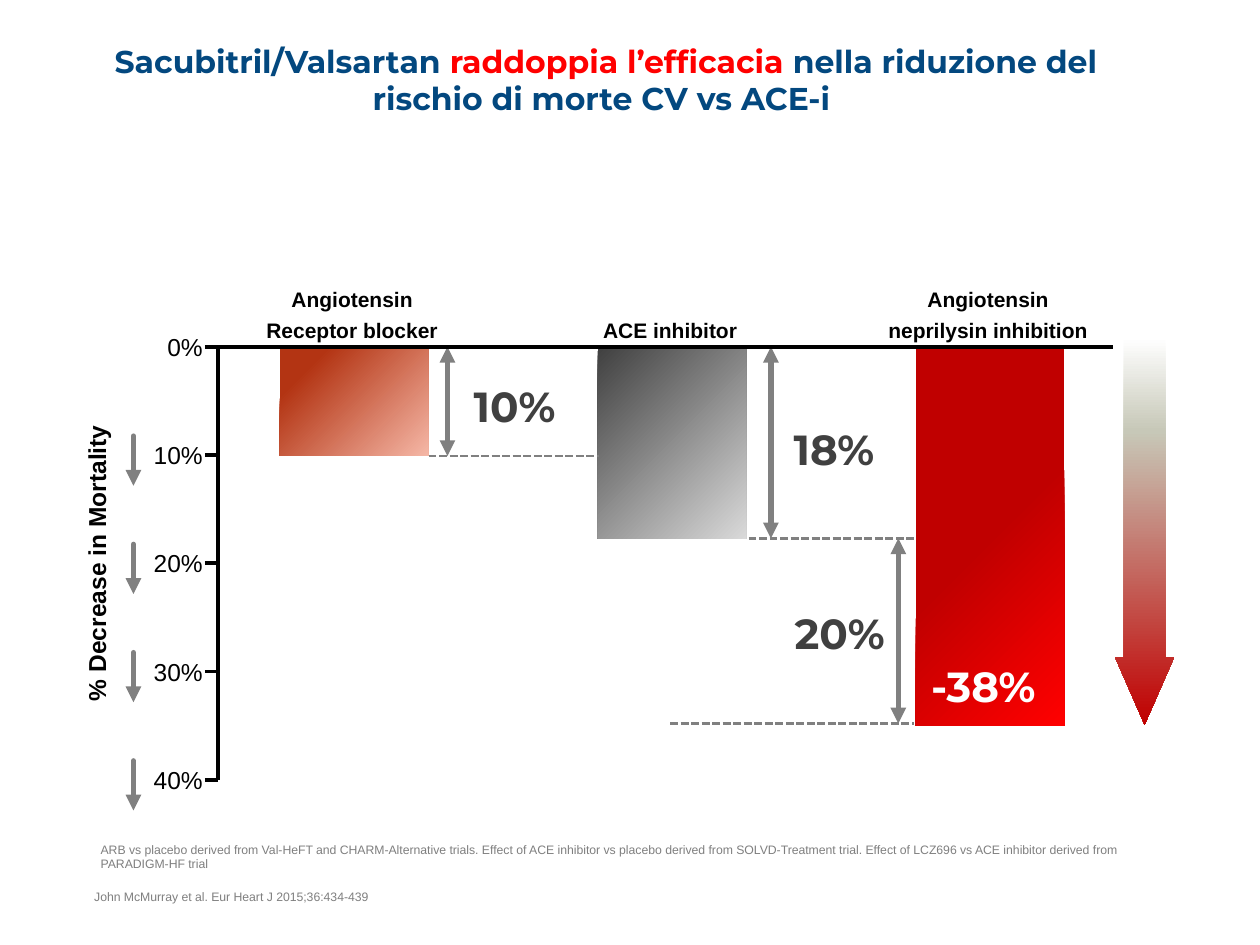
from copy import deepcopy

from lxml import etree
from pptx import Presentation
from pptx.dml.color import RGBColor
from pptx.enum.dml import MSO_LINE
from pptx.enum.shapes import MSO_CONNECTOR, MSO_SHAPE
from pptx.enum.text import PP_ALIGN
from pptx.oxml.ns import qn
from pptx.util import Cm, Pt

LEFT, CENTER, RIGHT = PP_ALIGN.LEFT, PP_ALIGN.CENTER, PP_ALIGN.RIGHT
STRAIGHT, DASHED = MSO_CONNECTOR.STRAIGHT, MSO_LINE.SQUARE_DOT
RECTANGLE, DOWN_ARROW = MSO_SHAPE.RECTANGLE, MSO_SHAPE.DOWN_ARROW
BODY, DISPLAY = "Arial", "Montserrat"
COLORS = {
    "black": "000000", "white": "FFFFFF", "navy": "03487F", "red": "FF0000",
    "crimson": "C00000", "charcoal": "404040", "silver": "D9D9D9",
    "gray": "808080", "note": "7F7F7F", "rust": "B33413",
    "salmon": "F5B7A6", "sage": "C7C8B8",
}
PERCENT_MAX, PERCENT_STEP = 40, 10
BARS = [
    ("Angiotensin\nReceptor blocker", 5.28, 1.27, 10.1, [(0.19, "rust"), (1, "salmon")]),
    ("ACE inhibitor", 3.89, 0.64, 17.7, [(0, "charcoal"), (1, "silver")]),
    ("Angiotensin\vneprilysin inhibition", 6.07, 1.27, 35, [(0.5, "crimson"), (1, "red")]),
]
GUIDES = [(4.25, 7.68, 10.1), (10.7, 14.03, 17.7), (9.12, 14.03, 34.8)]
SPANS = [(4.63, 0, 10.1), (11.15, 0, 17.7), (13.72, 17.7, 34.8)]
EFFECTS = [
    ("10%", 4.91, 0.55, 2.51, "charcoal"),
    ("18%", 11.36, 1.42, 2.51, "charcoal"),
    ("20%", 11.38, 5.13, 2.51, "charcoal"),
    ("-38%", 14.13, 6.2, 2.9, "white"),
]
TITLE = [
    ("Sacubitril/Valsartan ", "navy"),
    ("raddoppia l’efficacia ", "red"),
    ("nella riduzione del rischio di morte CV vs ACE-i ", "navy"),
]
TRIALS = (
    "ARB vs placebo derived from Val-HeFT and CHARM-Alternative trials. "
    "Effect of ACE inhibitor vs placebo derived from SOLVD-Treatment trial. "
    "Effect of LCZ696 vs ACE inhibitor derived from PARADIGM-HF trial"
)
CITATION = "John McMurray et al. Eur Heart J 2015;36:434-439"


def rgb(name):
    """Return the named colour."""
    return RGBColor.from_string(COLORS[name])


def add_text(slide, box, text, size, color="black", font=BODY, bold=False,
             align=LEFT, wrap=True, inset=(0, 0), spacing=None):
    """Add a text box with uniform formatting and return it."""
    label = slide.shapes.add_textbox(*map(Cm, box))
    frame = label.text_frame
    frame.word_wrap = wrap
    frame.margin_left = frame.margin_right = Cm(inset[0])
    frame.margin_top = frame.margin_bottom = Cm(inset[1])
    frame.text = text
    for paragraph in frame.paragraphs:
        paragraph.alignment = align
        paragraph.line_spacing = spacing
        paragraph.font.size = Pt(size)
        paragraph.font.name = font
        paragraph.font.bold = bold
        paragraph.font.color.rgb = rgb(color)
    return label


def add_line(slide, start, end, color, width, dash=None, ends=(), cap="flat"):
    """Add a straight line, with triangles at the ends that are named."""
    line = slide.shapes.add_connector(STRAIGHT, *map(Cm, (*start, *end)))
    line.line.color.rgb = rgb(color)
    line.line.width = Pt(width)
    if dash:
        line.line.dash_style = dash
    outline = line.line._get_or_add_ln()
    outline.set("cap", cap)
    for end_name in ends:
        etree.SubElement(outline, qn(f"a:{end_name}")).set("type", "triangle")
    etree.SubElement(line._element.spPr, qn("a:effectLst"))


def add_gradient_shape(slide, kind, box, stops, angle):
    """Add a borderless shape with a linear gradient, angle clockwise."""
    shape = slide.shapes.add_shape(kind, *map(Cm, box))
    shape.shadow.inherit = False
    shape.line.fill.background()
    shape.fill.gradient()
    stop_list = shape._element.spPr.find(f".//{qn('a:gsLst')}")
    while len(stop_list) < len(stops):
        stop_list.append(deepcopy(stop_list[-1]))
    for stop, (position, color) in zip(shape.fill.gradient_stops, stops):
        stop.position = position
        stop.color.rgb = rgb(color)
    shape.fill.gradient_angle = 360 - angle
    return shape


def add_title(slide, box):
    """Write the headline with its highlighted phrase."""
    title = add_text(slide, box, "", 18, font=DISPLAY, bold=True, align=CENTER)
    paragraph = title.text_frame.paragraphs[0]
    for phrase, color in TITLE:
        run = paragraph.add_run()
        run.text = phrase
        run.font.color.rgb = rgb(color)


def add_axis_title(slide, box):
    """Write the rotated axis title with a downward arrow for each step."""
    left, top, width, height = box
    thickness = 0.89
    title_box = (left - height / 2, top + (height - thickness) / 2, height, thickness)
    title = add_text(slide, title_box, "% Decrease in Mortality", 14, bold=True,
                     align=CENTER, inset=(0.25, 0.13), spacing=Pt(18))
    title.rotation = 270
    steps = PERCENT_MAX // PERCENT_STEP
    for step in range(steps):
        y = top + 1.8 + step * height / steps
        add_line(slide, (left + width, y), (left + width, y + 1), "gray", 3,
                 ends=["tailEnd"], cap="rnd")


def add_plot(slide, box):
    """Draw the hanging bars, their reductions and both axes."""
    left, top, width, height = box

    def y_of(percent):
        """Return the height at which a percentage lies."""
        return top + height * percent / PERCENT_MAX

    for index, (name, name_width, name_height, depth, stops) in enumerate(BARS):
        bar_left, bar_width = left + 1.25 + 6.41 * index, 3
        add_gradient_shape(slide, RECTANGLE,
                           (bar_left, top, bar_width, y_of(depth) - top), stops, 45)
        name_box = (bar_left + (bar_width - name_width) / 2 - 0.04,
                    top - 0.08 - name_height, name_width, name_height)
        add_text(slide, name_box, name, 12, bold=True, align=CENTER, spacing=Pt(18))
    for start, end, percent in GUIDES:
        add_line(slide, (left + start, y_of(percent)), (left + end, y_of(percent)),
                 "gray", 1.5, dash=DASHED)
    for x, start, end in SPANS:
        add_line(slide, (left + x, y_of(start)), (left + x, y_of(end)),
                 "gray", 3, ends=["headEnd", "tailEnd"])
    for effect, x, y, effect_width, color in EFFECTS:
        add_text(slide, (left + x, top + y, effect_width, 1.27), effect, 24, color,
                 DISPLAY, bold=True, wrap=False, inset=(0.25, 0.13))
    for percent in range(0, PERCENT_MAX + 1, PERCENT_STEP):
        y = y_of(percent)
        add_text(slide, (left - 1.5, y - 0.3, 1.2, 0.61), f"{percent}%", 14,
                 align=RIGHT)
        add_line(slide, (left - 0.26, y), (left, y), "black", 2.25)
    add_line(slide, (left, top), (left, top + height), "black", 2.25)
    add_line(slide, (left, top), (left + width, top), "black", 2.25)


def add_trend_arrow(slide, box):
    """Draw the fading arrow that points to greater benefit."""
    stops = [(0, "white"), (0.24, "sage"), (1, "crimson")]
    arrow = add_gradient_shape(slide, DOWN_ARROW, box, stops, 90)
    arrow.adjustments[0] = 0.7
    arrow.adjustments[1] = 1.14


def add_sources(slide, box):
    """Write the trial note and the citation below it."""
    left, top, width, height = box
    add_text(slide, (left, top, width, 0.69), TRIALS, 7, "note",
             inset=(0.13, 0.08), spacing=0.95)
    add_text(slide, (left, top + height - 0.38, width, 0.38), CITATION, 7, "note")


def main():
    """Build the slide and save it."""
    deck = Presentation()
    deck.slide_width, deck.slide_height = Cm(25.4), Cm(19.05)
    slide = deck.slides.add_slide(deck.slide_layouts[6])
    add_title(slide, (1.42, 0.84, 21.59, 3.2))
    add_axis_title(slide, (1.92, 6.99, 0.77, 8.73))
    add_plot(slide, (4.39, 6.99, 18.04, 8.73))
    add_trend_arrow(slide, (22.48, 6.81, 1.19, 7.8))
    add_sources(slide, (1.9, 16.92, 21.79, 1.39))
    deck.save("out.pptx")


if __name__ == "__main__":
    main()
